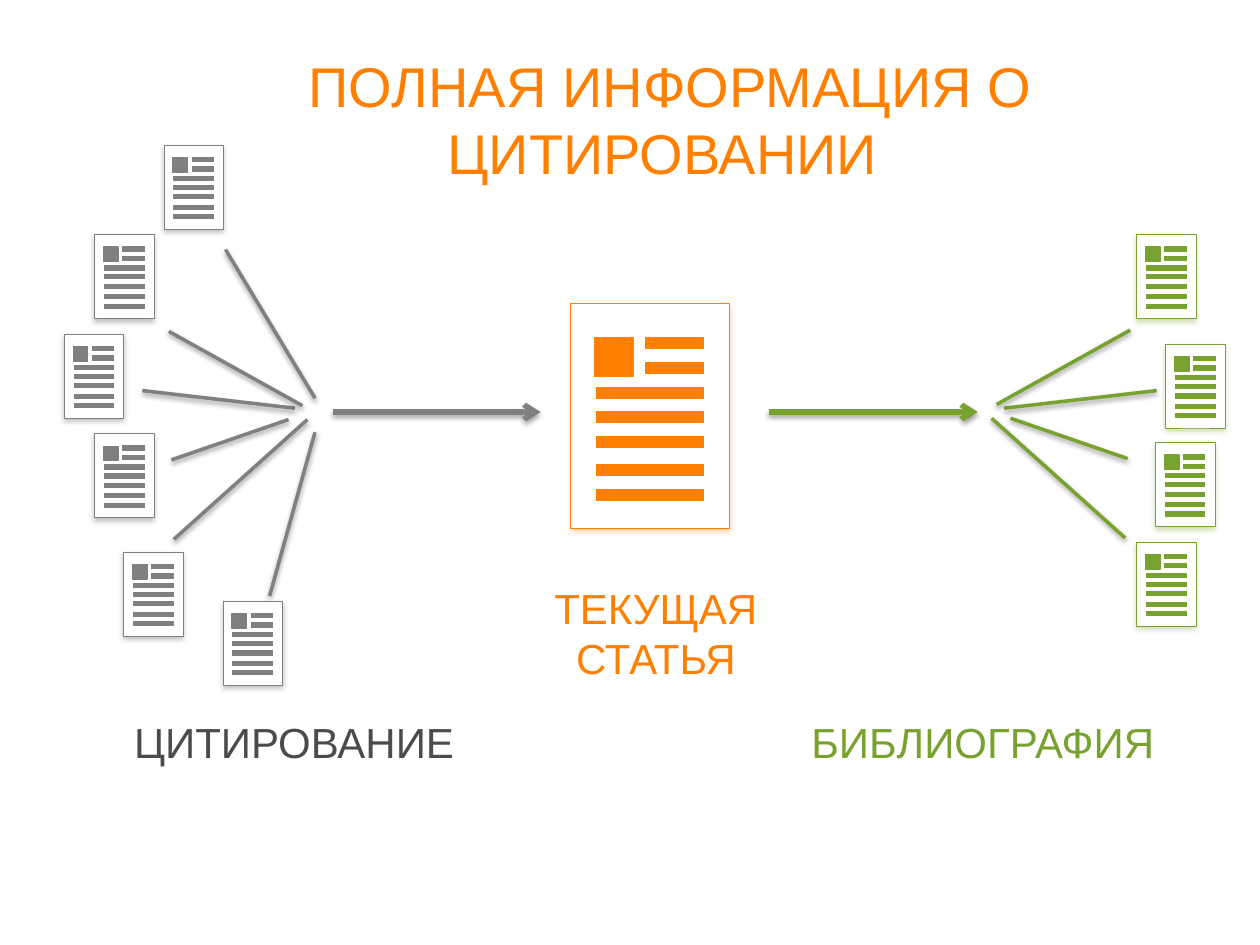
from dataclasses import dataclass

import pptx
import pptx.dml.color
import pptx.enum.shapes
import pptx.enum.text
import pptx.oxml
import pptx.oxml.ns
import pptx.util
from pptx.util import Inches


@dataclass(frozen=True)
class Theme:
    font: str = "Arial"
    title_size: int = 32
    label_size: int = 24
    white: str = "FFFFFF"
    black: str = "000000"
    orange: str = "FF8000"
    green: str = "78A22F"
    gray: str = "808080"
    dark: str = "4B4B4B"


def rgb(color):
    return pptx.dml.color.RGBColor.from_string(color)


class Diagram:
    PAPER = (1.26, 1.78)
    SQUARE = (0.19, 0.27, 0.31)
    SHORT_BARS = (0.31, 0.51)
    LONG_BARS = (0.71, 0.9, 1.1, 1.32, 1.52)
    SHORT_LEFT, LONG_LEFT, BAR_RIGHT = 0.59, 0.2, 1.06

    def __init__(self, page, theme):
        self.page = page
        self.theme = theme

    def group(self):
        return self.page.shapes.add_group_shape().shapes

    def label(self, lines, color, size, left, top, width, height, wrap=True):
        box = self.page.shapes.add_textbox(
            Inches(left), Inches(top), Inches(width), Inches(height))
        frame = box.text_frame
        frame.word_wrap = wrap
        frame.auto_size = pptx.enum.text.MSO_AUTO_SIZE.SHAPE_TO_FIT_TEXT
        for index, line in enumerate(lines):
            para = frame.add_paragraph() if index else frame.paragraphs[0]
            para.alignment = pptx.enum.text.PP_ALIGN.CENTER
            span = para.add_run()
            span.text = line
            span.font.name = self.theme.font
            span.font.size = pptx.util.Pt(size)
            span.font.color.rgb = rgb(color)

    def effects(self, shape, color=None, alpha=0, distance=0):
        """Set a soft downward shadow, or none when no color is given."""
        shadow = ""
        if color:
            shadow = (
                f'<a:outerShdw blurRad="{pptx.util.Pt(3.1)}" '
                f'dist="{pptx.util.Pt(distance)}" dir="5400000" rotWithShape="0">'
                f'<a:srgbClr val="{color}"><a:alpha val="{alpha * 1000}"/>'
                "</a:srgbClr></a:outerShdw>")
        shape.element.spPr.append(pptx.oxml.parse_xml(
            f'<a:effectLst {pptx.oxml.ns.nsdecls("a")}>{shadow}</a:effectLst>'))

    def rectangle(self, shapes, left, top, width, height, fill, line, weight,
                  shadow=None):
        shape = shapes.add_shape(
            pptx.enum.shapes.MSO_SHAPE.RECTANGLE,
            Inches(left), Inches(top), Inches(width), Inches(height))
        shape.fill.solid()
        shape.fill.fore_color.rgb = rgb(fill)
        shape.line.color.rgb = rgb(line)
        shape.line.width = pptx.util.Pt(weight)
        self.effects(shape, shadow, 35, 1.8)

    def line(self, shapes, start, end, color, weight, arrow=False, shadow=None):
        connector = shapes.add_connector(
            pptx.enum.shapes.MSO_CONNECTOR.STRAIGHT,
            *(Inches(value) for value in (*start, *end)))
        connector.line.color.rgb = rgb(color)
        connector.line.width = pptx.util.Pt(weight)
        if arrow:
            connector.line._get_or_add_ln().append(pptx.oxml.parse_xml(
                f'<a:tailEnd {pptx.oxml.ns.nsdecls("a")} type="arrow"/>'))
        self.effects(connector, shadow, 38, 1.6)

    def article(self, shapes, left, top, color, shadow, scale=1, weight=7):
        width, height = (scale * side for side in self.PAPER)
        self.rectangle(shapes, left, top, width, height,
                       self.theme.white, color, 0.25, shadow)
        x, y, side = (scale * value for value in self.SQUARE)
        self.rectangle(shapes, left + x, top + y, side, side, color, color, 0.75)
        bars = [(self.SHORT_LEFT, y) for y in self.SHORT_BARS]
        bars += [(self.LONG_LEFT, y) for y in self.LONG_BARS]
        for x, y in bars:
            level = top + scale * y
            self.line(shapes, (left + scale * x, level),
                      (left + scale * self.BAR_RIGHT, level), color, weight)

    def fan(self, arrow, rays, articles, color, shadow):
        """Draw a group of small articles, their rays and the main arrow."""
        shapes = self.group()
        self.line(shapes, *arrow, color, 3, True, self.theme.black)
        for start, end in rays:
            self.line(shapes, start, end, color, 2, shadow=self.theme.black)
        for left, top in articles:
            self.article(shapes, left, top, color, shadow, 0.375, 3)


def main():
    deck = pptx.Presentation()
    deck.slide_width, deck.slide_height = Inches(10), Inches(7.5)
    theme = Theme()
    diagram = Diagram(deck.slides.add_slide(deck.slide_layouts[6]), theme)

    diagram.label(["ПОЛНАЯ ИНФОРМАЦИЯ О ЦИТИРОВАНИИ "], theme.orange,
                  theme.title_size, 0.91, 0.36, 8.82, 1.18)
    diagram.label(["ТЕКУЩАЯ", "СТАТЬЯ"], theme.orange,
                  theme.label_size, 4.29, 4.57, 1.83, 0.91, wrap=False)
    diagram.label(["ЦИТИРОВАНИЕ "], theme.dark,
                  theme.label_size, -0.01, 5.64, 4.78, 0.5)
    diagram.label(["БИБЛИОГРАФИЯ"], theme.green,
                  theme.label_size, 5.6, 5.64, 4.4, 0.5)

    diagram.article(diagram.group(), 4.53, 2.41, theme.orange, theme.orange)

    bibliography_rays = [
        ((8.95, 3.64), (8.02, 3.32)),
        ((7.87, 3.32), (8.93, 4.27)),
        ((9.18, 3.1), (7.97, 3.24)),
        ((8.97, 2.62), (7.91, 3.21)),
    ]
    bibliography = [(9.02, 1.86), (9.25, 2.73), (9.17, 3.51), (9.02, 4.3)]
    diagram.fan(((6.1, 3.27), (7.76, 3.27)), bibliography_rays, bibliography,
                theme.green, theme.green)

    citing_rays = [
        ((1.79, 1.98), (2.5, 3.16)),
        ((1.36, 3.65), (2.29, 3.33)),
        ((2.44, 3.33), (1.38, 4.28)),
        ((2.5, 3.43), (2.14, 4.73)),
        ((1.13, 3.1), (2.34, 3.24)),
        ((1.34, 2.63), (2.4, 3.22)),
    ]
    citing = [(1.3, 1.15), (0.75, 1.86), (0.98, 4.38),
              (0.75, 3.44), (1.77, 4.77), (0.51, 2.65)]
    diagram.fan(((2.64, 3.27), (4.29, 3.27)), citing_rays, citing,
                theme.gray, theme.dark)

    deck.save("out.pptx")


if __name__ == "__main__":
    main()
